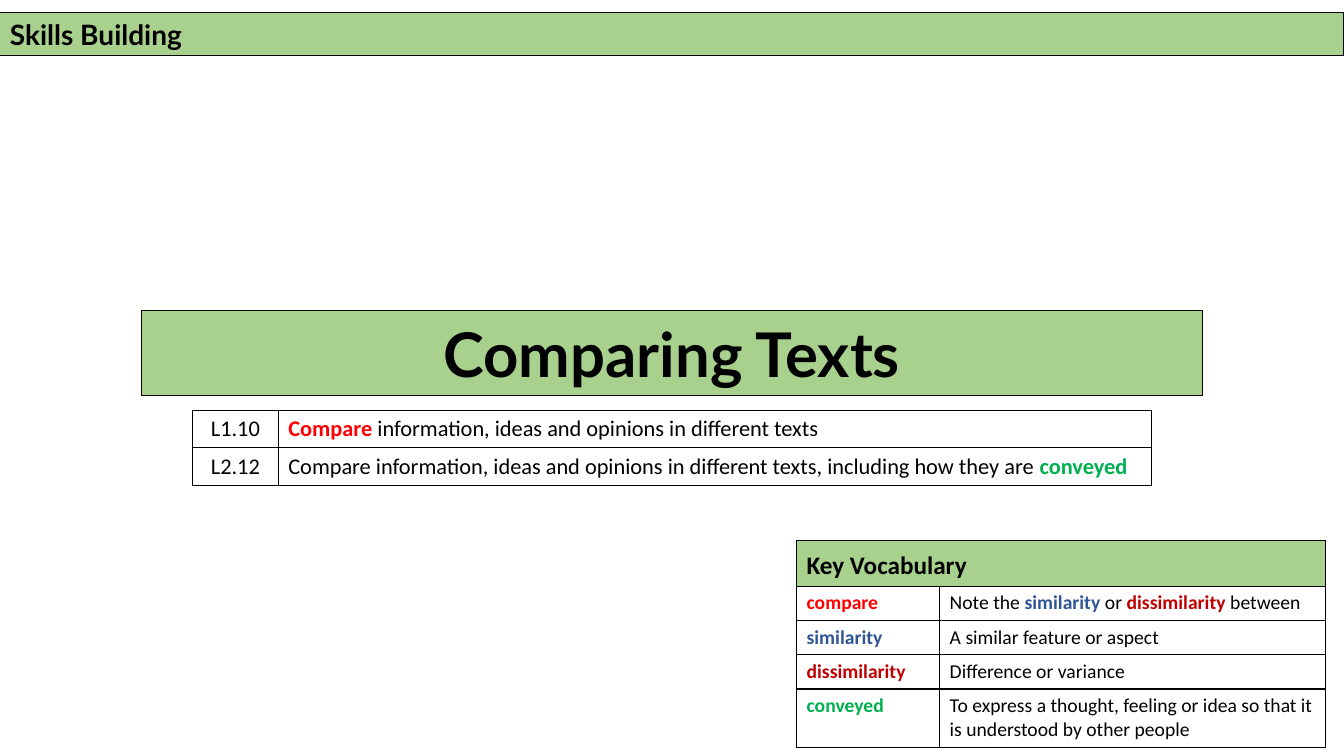
from lxml.etree import SubElement
from pptx import Presentation
from pptx.dml.color import RGBColor
from pptx.enum.shapes import MSO_SHAPE
from pptx.enum.text import MSO_ANCHOR, PP_ALIGN
from pptx.oxml import parse_xml
from pptx.oxml.ns import nsdecls, qn
from pptx.util import Inches, Pt

COLOURS = {
    "band": "A9D18E", "paper": "FFFFFF", "ink": "000000",
    "compare": "FF0000", "similarity": "2F5597",
    "dissimilarity": "C00000", "conveyed": "00B050",
}

# Words between asterisks are bold; key terms also take their own colour.
BANNERS = [
    {"text": "*Skills Building*", "width": 1, "top": 0.016, "height": 0.058,
     "size": 20, "align": PP_ALIGN.LEFT},
    {"text": "*Comparing Texts*", "width": 0.79, "top": 0.411, "height": 0.112,
     "size": 44, "align": PP_ALIGN.CENTER},
]
OBJECTIVES = [
    ("L1.10", "*Compare* information, ideas and opinions in different texts"),
    ("L2.12", "Compare information, ideas and opinions in different texts, "
              "including how they are *conveyed*"),
]
VOCABULARY = [
    ("*Key Vocabulary*", ""),
    ("*compare*", "Note the *similarity* or *dissimilarity* between"),
    ("*similarity*", "A similar feature or aspect"),
    ("*dissimilarity*", "Difference or variance"),
    ("*conveyed*", "To express a thought, feeling or idea so that it "
                   "is understood by other people"),
]
OBJECTIVE_COLUMNS, OBJECTIVE_ROWS = [0.85, 8.66], [0.37] * 2
VOCABULARY_COLUMNS, VOCABULARY_ROWS = [1.42, 3.83], [0.45] + [0.34] * 3 + [0.58]
WIDTH, HEIGHT = 13.33, 7.5
RIGHT_MARGIN = 0.18


def colour(name):
    return RGBColor.from_string(COLOURS[name])


def write(frame, text, size, font, align=PP_ALIGN.LEFT):
    para = frame.paragraphs[0]
    para.alignment = align
    for index, part in enumerate(text.split("*")):
        if not part:
            continue
        span = para.add_run()
        span.text = part
        form = {"size": Pt(size), "name": font, "bold": index % 2 == 1}
        for key, value in form.items():
            setattr(span.font, key, value)
        term = part.lower() if index % 2 else "ink"
        span.font.color.rgb = colour(term if term in COLOURS else "ink")


def add_banner(page, banner):
    box = page.shapes.add_shape(
        MSO_SHAPE.RECTANGLE, Inches(WIDTH * (1 - banner["width"]) / 2),
        Inches(HEIGHT * banner["top"]), Inches(WIDTH * banner["width"]),
        Inches(HEIGHT * banner["height"]))
    box.shadow.inherit = False
    box.fill.solid()
    box.fill.fore_color.rgb = colour("band")
    box.line.color.rgb = colour("ink")
    box.line.width = Pt(0.75)
    box.text_frame.word_wrap = True
    box.text_frame.vertical_anchor = MSO_ANCHOR.MIDDLE
    write(box.text_frame, banner["text"], banner["size"], "Lato", banner["align"])


def add_borders(cell):
    properties = cell._tc.get_or_add_tcPr()
    for index, side in enumerate(("lnL", "lnR", "lnT", "lnB")):
        edge = parse_xml(f'<a:{side} {nsdecls("a")} w="{Pt(1)}"/>')
        fill = SubElement(edge, qn("a:solidFill"))
        SubElement(fill, qn("a:srgbClr"), val=COLOURS["ink"])
        properties.insert(index, edge)


def add_grid(page, content, left, top, columns, rows, size):
    table = page.shapes.add_table(
        len(rows), len(columns), Inches(left), Inches(top),
        Inches(sum(columns)), Inches(sum(rows))).table
    table.first_row = table.horz_banding = False
    for column, width in zip(table.columns, columns):
        column.width = Inches(width)
    for row, height, texts in zip(table.rows, rows, content):
        row.height = Inches(height)
        for cell, text in zip(row.cells, texts):
            cell.fill.solid()
            cell.fill.fore_color.rgb = colour("paper")
            add_borders(cell)
            if text:
                write(cell.text_frame, text, size, "Calibri")
    return table


def main():
    deck = Presentation()
    deck.slide_width, deck.slide_height = Inches(WIDTH), Inches(HEIGHT)
    page = deck.slides.add_slide(deck.slide_layouts[6])

    vocabulary = add_grid(
        page, VOCABULARY, WIDTH - RIGHT_MARGIN - sum(VOCABULARY_COLUMNS), 5.36,
        VOCABULARY_COLUMNS, VOCABULARY_ROWS, 14)
    heading = vocabulary.cell(0, 0)
    heading.merge(vocabulary.cell(0, 1))
    heading.fill.fore_color.rgb = colour("band")
    heading.margin_top = Inches(0.1)
    heading.text_frame.paragraphs[0].runs[0].font.size = Pt(18)

    objectives = add_grid(
        page, OBJECTIVES, (WIDTH - sum(OBJECTIVE_COLUMNS)) / 2, 4.07,
        OBJECTIVE_COLUMNS, OBJECTIVE_ROWS, 16)
    for row in objectives.rows:
        row.cells[0].text_frame.paragraphs[0].alignment = PP_ALIGN.CENTER

    for banner in BANNERS:
        add_banner(page, banner)
    deck.save("out.pptx")


if __name__ == "__main__":
    main()
